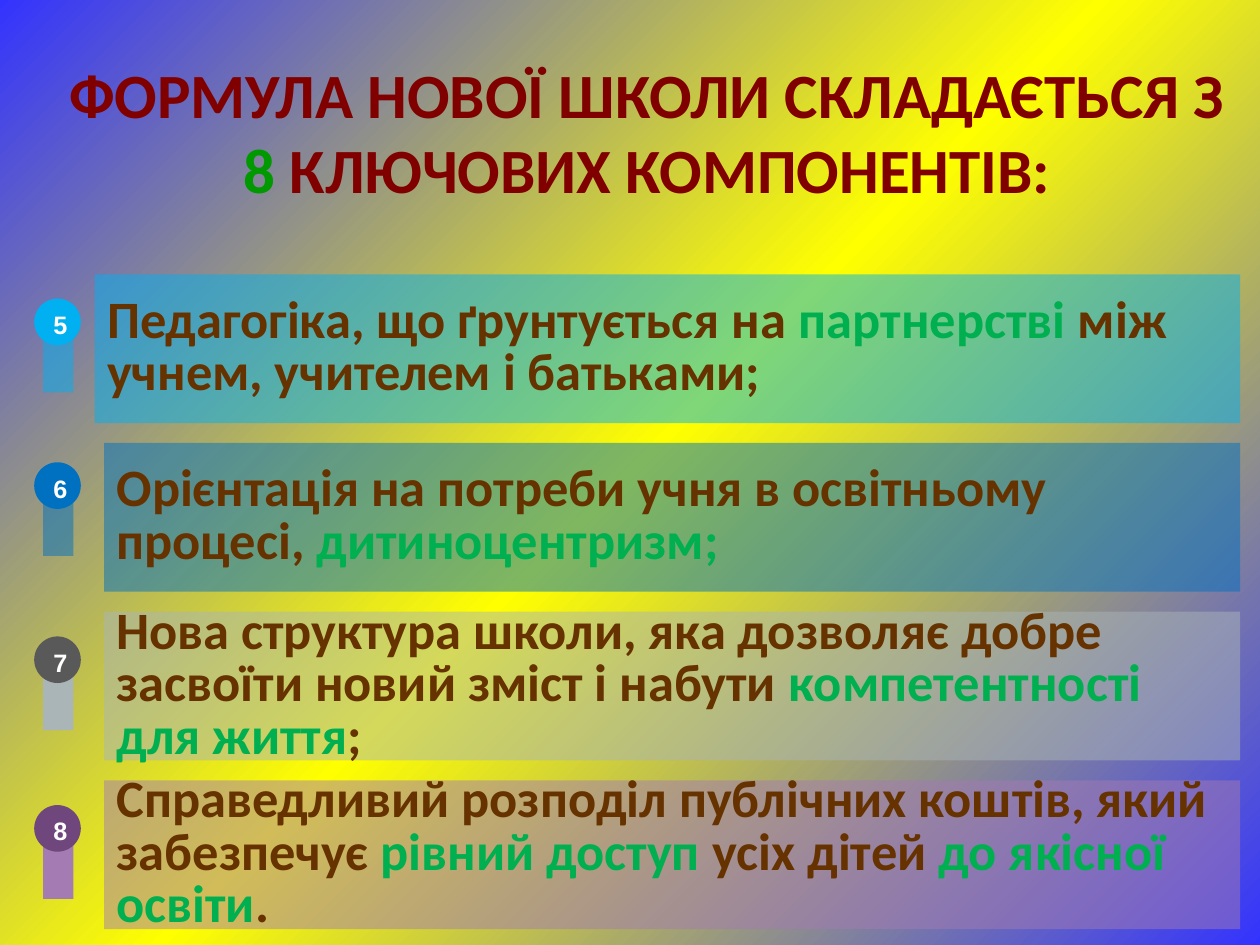
from copy import deepcopy

from lxml import etree
from pptx import Presentation
from pptx.dml.color import RGBColor
from pptx.enum.shapes import MSO_SHAPE
from pptx.enum.text import MSO_ANCHOR, PP_ALIGN
from pptx.oxml.ns import qn
from pptx.util import Cm, Pt

RECTANGLE, OVAL = MSO_SHAPE.RECTANGLE, MSO_SHAPE.OVAL
MIDDLE, CENTER, LEFT = MSO_ANCHOR.MIDDLE, PP_ALIGN.CENTER, PP_ALIGN.LEFT

BLUE = RGBColor(0x33, 0x33, 0xFF)
YELLOW = RGBColor(0xFF, 0xFF, 0x00)
MAROON = RGBColor(0x80, 0x00, 0x00)
TITLE_GREEN = RGBColor(0x00, 0x99, 0x00)
BROWN = RGBColor(0x66, 0x33, 0x00)
GREEN = RGBColor(0x00, 0xB0, 0x50)
WHITE = RGBColor(0xFF, 0xFF, 0xFF)
SKY = RGBColor(0x00, 0xB0, 0xF0)
OCEAN = RGBColor(0x00, 0x70, 0xC0)
SILVER = RGBColor(0xAA, 0xB5, 0xB7)
GRAPHITE = RGBColor(0x59, 0x59, 0x59)
LILAC = RGBColor(0xA4, 0x7B, 0xB3)
PLUM = RGBColor(0x6F, 0x47, 0x7D)

TITLE_FORMAT = {"name": "Calibri", "size": Pt(36), "bold": True}
CARD_FORMAT = {"name": "Calibri", "size": Pt(30), "bold": True}
NUMBER_FORMAT = {"name": "Arial", "size": Pt(18), "bold": True}

FIRST_NUMBER = 5
CARD_TOP, CARD_PITCH, CARD_HEIGHT, CARD_RIGHT = 5.53, 3.4, 3, 25
BADGE_LEFT, BADGE_SIZE = 0.69, 0.94
BAR_LEFT, BAR_DROP, BAR_WIDTH, BAR_HEIGHT = 0.87, 0.14, 0.61, 1.75

TITLE = [
    ("ФОРМУЛА НОВОЇ ШКОЛИ СКЛАДАЄТЬСЯ З ", MAROON),
    ("8", TITLE_GREEN),
    (" КЛЮЧОВИХ КОМПОНЕНТІВ:", MAROON),
]

# card left, badge top, card colour, badge colour, bar opacity, text
COMPONENTS = [
    (1.91, 6.02, SKY, SKY, 50, [
        ("Педагогіка, що ґрунтується на ", BROWN),
        ("партнерстві", GREEN),
        (" між учнем, учителем і батьками;", BROWN),
    ]),
    (2.1, 9.32, OCEAN, OCEAN, 50, [
        ("Орієнтація на потреби учня в освітньому процесі, ", BROWN),
        ("дитиноцентризм;", GREEN),
    ]),
    (2.1, 12.83, SILVER, GRAPHITE, 100, [
        ("Нова структура школи, яка дозволяє добре засвоїти новий зміст і набути ", BROWN),
        ("компетентності для життя", GREEN),
        (";", BROWN),
    ]),
    (2.1, 16.23, LILAC, PLUM, 100, [
        ("Справедливий розподіл публічних коштів, який забезпечує ", BROWN),
        ("рівний доступ ", GREEN),
        ("усіх дітей ", BROWN),
        ("до якісної освіти", GREEN),
        (".", BROWN),
    ]),
]


def paint_background(slide):
    fill = slide.background.fill
    fill.gradient()
    stop_list = slide.element.find(".//" + qn("a:gsLst"))
    stop_list.append(deepcopy(stop_list[0]))
    for stop, position, color in zip(fill.gradient_stops, (0, 0.5, 1), (BLUE, YELLOW, BLUE)):
        stop.position = position
        stop.color.rgb = color
    fill.gradient_angle = 315


def add_block(slide, kind, box, color, opacity=100):
    shape = slide.shapes.add_shape(kind, *map(Cm, box))
    shape.shadow.inherit = False
    shape.line.fill.background()
    shape.fill.solid()
    shape.fill.fore_color.rgb = color
    if opacity < 100:
        color_element = shape.fill._xPr.find(".//" + qn("a:srgbClr"))
        etree.SubElement(color_element, qn("a:alpha"), val=str(opacity * 1000))
    return shape


def write_text(shape, pieces, font_format, alignment, line_spacing=None):
    frame = shape.text_frame
    frame.word_wrap = True
    frame.vertical_anchor = MIDDLE
    paragraph = frame.paragraphs[0]
    paragraph.alignment = alignment
    paragraph.line_spacing = line_spacing
    for text, color in pieces:
        run = paragraph.add_run()
        run.text = text
        for attribute, value in font_format.items():
            setattr(run.font, attribute, value)
        run.font.color.rgb = color
    return paragraph


def add_title(slide):
    title = slide.shapes.add_textbox(Cm(0.69), Cm(0.76), Cm(24.71), Cm(3.76))
    write_text(title, TITLE, TITLE_FORMAT, CENTER)


def add_card(slide, left, top, color, pieces):
    box = (left, top, CARD_RIGHT - left, CARD_HEIGHT)
    card = add_block(slide, RECTANGLE, box, color, 50)
    write_text(card, pieces, CARD_FORMAT, LEFT, Pt(30))


def add_badge(slide, number, top, bar_color, badge_color, bar_opacity):
    bar_box = (BAR_LEFT, top + BAR_DROP, BAR_WIDTH, BAR_HEIGHT)
    add_block(slide, RECTANGLE, bar_box, bar_color, bar_opacity)
    badge = add_block(slide, OVAL, (BADGE_LEFT, top, BADGE_SIZE, BADGE_SIZE), badge_color)
    paragraph = write_text(badge, [(str(number), WHITE)], NUMBER_FORMAT, CENTER)
    paragraph.runs[0].font._element.set("cap", "small")


def main():
    presentation = Presentation()
    presentation.slide_width, presentation.slide_height = Cm(25.4), Cm(19.05)
    slide = presentation.slides.add_slide(presentation.slide_layouts[6])
    paint_background(slide)
    add_title(slide)
    for index, component in enumerate(COMPONENTS):
        card_left, badge_top, color, badge_color, bar_opacity, pieces = component
        add_card(slide, card_left, CARD_TOP + index * CARD_PITCH, color, pieces)
        add_badge(slide, FIRST_NUMBER + index, badge_top, color, badge_color, bar_opacity)
    presentation.save("out.pptx")


if __name__ == "__main__":
    main()
